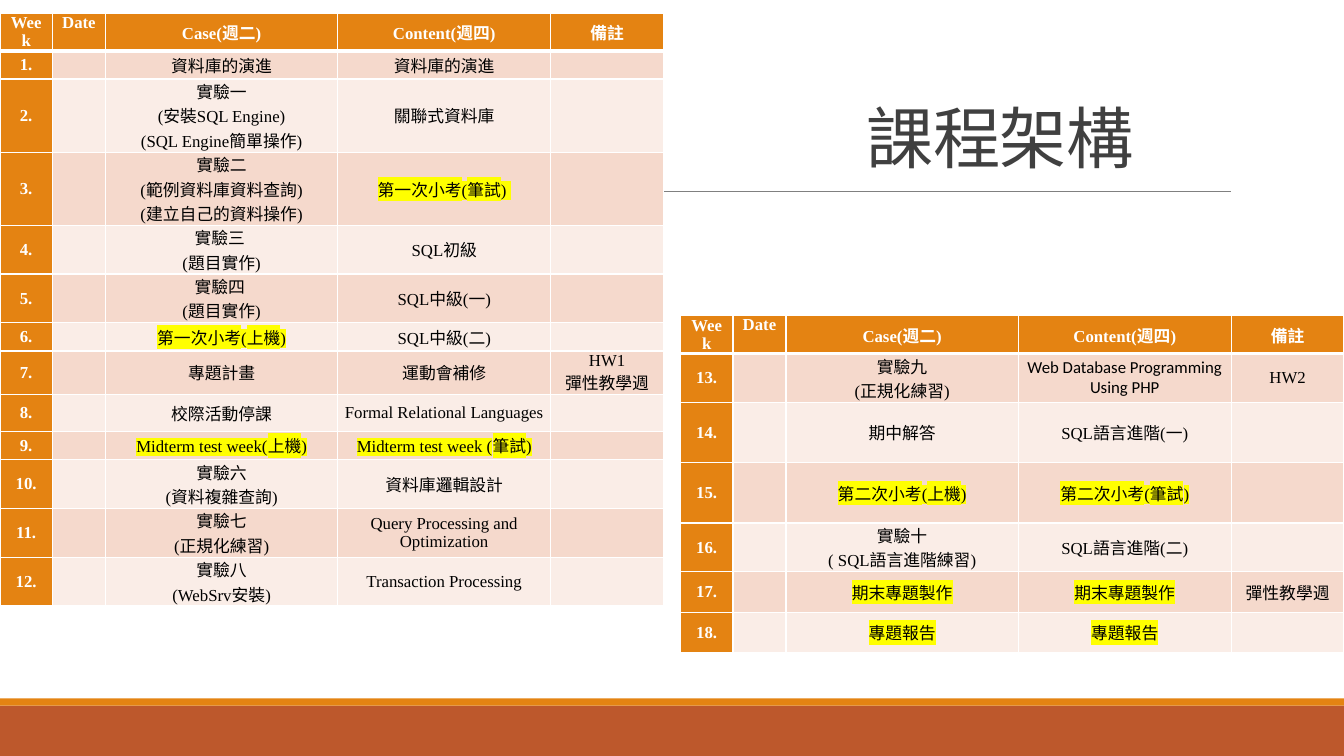
from dataclasses import dataclass

from lxml import etree
from pptx import Presentation
from pptx import util as u
from pptx.dml.color import RGBColor
from pptx.enum import shapes, text
from pptx.oxml.ns import qn

WHITE = RGBColor(0xFF, 0xFF, 0xFF)
BLACK = RGBColor(0, 0, 0)
ORANGE = RGBColor(0xE4, 0x83, 0x12)
RUST = RGBColor(0xBD, 0x58, 0x2C)
GRAY = RGBColor(0x80, 0x80, 0x80)
CHARCOAL = RGBColor(0x40, 0x40, 0x40)
YELLOW = RGBColor(0xFF, 0xFF, 0x00)
BANDS = RGBColor(0xF5, 0xD9, 0xCC), RGBColor(0xFA, 0xED, 0xE7)

SERIF, SANS, CJK = "Times New Roman", "Calibri", "Noto Sans CJK SC"


@dataclass
class Entry:
    """Cell wording: \\n starts a paragraph, \\v breaks a line."""
    wording: str
    latin: str = SERIF
    marked: bool = False


def exam(wording):
    return Entry(wording, marked=True)


HEADINGS = ("Week", "Date", "Case(週二)", "Content(週四)", "備註")
COLUMNS = (1.32, 1.34, 5.85, 5.37, 2.84)
HEADER_HEIGHT = 0.95

# Each week: row height, case, content, remark
FIRST_WEEKS = [
    (0.71, "資料庫的演進", "資料庫的演進", ""),
    (1.84, "實驗一\n(安裝SQL Engine)\v(SQL Engine簡單操作)", "關聯式資料庫", ""),
    (1.84, "實驗二\n(範例資料庫資料查詢)\v(建立自己的資料操作)", exam("第一次小考(筆試) "), ""),
    (1.23, "實驗三 \v(題目實作)", "SQL初級", ""),
    (1.23, "實驗四 \v(題目實作)", "SQL中級(一)", ""),
    (0.71, exam("第一次小考(上機)"), "SQL中級(二)", ""),
    (1.08, "專題計畫", "運動會補修", "HW1\n彈性教學週"),
    (0.94, "校際活動停課", "Formal Relational Languages", ""),
    (0.71, exam("Midterm test week(上機)"), exam("Midterm test week (筆試)"), ""),
    (1.23, "實驗六\v(資料複雜查詢)", "資料庫邏輯設計", ""),
    (1.23, "實驗七\v(正規化練習)", "Query Processing and Optimization", ""),
    (1.23, "實驗八\v(WebSrv安裝)", "Transaction Processing", ""),
]
LAST_WEEKS = [
    (1.23, "實驗九\v(正規化練習)", Entry("Web Database Programming Using PHP", SANS), "HW2"),
    (1.52, "期中解答", "SQL語言進階(一)", ""),
    (1.52, exam("第二次小考(上機)"), exam("第二次小考(筆試)"), ""),
    (1.23, "實驗十\v( SQL語言進階練習)", "SQL語言進階(二)", ""),
    (1.02, exam("期末專題製作"), exam("期末專題製作"), "彈性教學週"),
    (1.02, exam("專題報告"), exam("專題報告"), ""),
]


def apply(target, values):
    for name, value in values.items():
        setattr(target, name, value)


class ScheduleSlide:
    def __init__(self, deck):
        self.slide = deck.slides.add_slide(deck.slide_layouts[5])
        self.size = u.Pt(12)

    def style_run(self, run, latin, size, color, bold=False):
        apply(run.font, {"name": latin, "size": size, "bold": bold})
        run.font.color.rgb = color
        east_asian = etree.Element(qn("a:ea"), typeface=CJK)
        run.font._element.find(qn("a:latin")).addnext(east_asian)

    def highlight(self, run):
        mark = etree.Element(qn("a:highlight"))
        etree.SubElement(mark, qn("a:srgbClr"), val=str(YELLOW))
        run.font._element.find(qn("a:latin")).addprevious(mark)

    def title(self, wording, left, top, width, height):
        heading = self.slide.shapes.title
        apply(heading, {"left": u.Cm(left), "top": u.Cm(top),
                        "width": u.Cm(width), "height": u.Cm(height)})
        frame = heading.text_frame
        frame.text = wording
        apply(frame, {"vertical_anchor": text.MSO_ANCHOR.BOTTOM, "word_wrap": True,
                      "auto_size": text.MSO_AUTO_SIZE.NONE})
        paragraph = frame.paragraphs[0]
        apply(paragraph, {"alignment": text.PP_ALIGN.LEFT, "line_spacing": 0.85})
        run = paragraph.runs[0]
        self.style_run(run, CJK, u.Pt(48), CHARCOAL)
        run.font._element.set("spc", "-50")

    def bar(self, top, height, color):
        band = self.slide.shapes.add_shape(
            shapes.MSO_SHAPE.RECTANGLE, 0, u.Cm(top), u.Cm(33.87), u.Cm(height))
        band.shadow.inherit = False
        band.fill.solid()
        band.fill.fore_color.rgb = color
        band.line.fill.background()

    def rule(self, start, end, y):
        line = self.slide.shapes.add_connector(
            shapes.MSO_CONNECTOR.STRAIGHT, u.Cm(start), u.Cm(y), u.Cm(end), u.Cm(y))
        line.line.color.rgb = GRAY
        line.line.width = u.Pt(0.5)
        etree.SubElement(line._element.spPr, qn("a:effectLst"))

    def borders(self, cell, top, bottom):
        """Draw white cell edges; top and bottom are widths in points."""
        properties = cell._tc.get_or_add_tcPr()
        edges = {"a:lnL": 1, "a:lnR": 1, "a:lnT": top, "a:lnB": bottom}
        for position, (edge, width) in enumerate(edges.items()):
            line = etree.Element(qn(edge), w=str(u.Pt(width)))
            fill = etree.SubElement(line, qn("a:solidFill"))
            etree.SubElement(fill, qn("a:srgbClr"), val=str(WHITE))
            properties.insert(position, line)

    def fill_cell(self, cell, entry, background, color, bold):
        if isinstance(entry, str):
            entry = Entry(entry)
        apply(cell, {"margin_left": u.Cm(0.18), "margin_right": u.Cm(0.18),
                     "margin_top": 0, "margin_bottom": 0,
                     "vertical_anchor": text.MSO_ANCHOR.MIDDLE})
        cell.fill.solid()
        cell.fill.fore_color.rgb = background
        cell.text_frame.text = entry.wording
        points = str(self.size.centipoints)
        for paragraph in cell.text_frame.paragraphs:
            paragraph.alignment = text.PP_ALIGN.CENTER
            for run in paragraph.runs:
                self.style_run(run, entry.latin, self.size, color, bold)
                if entry.marked:
                    self.highlight(run)
            for line_break in paragraph._p.findall(qn("a:br")):
                etree.SubElement(line_break, qn("a:rPr"), sz=points)
            paragraph._p.get_or_add_endParaRPr().set("sz", points)

    def schedule(self, left, top, weeks, first_week):
        heights = [HEADER_HEIGHT] + [week[0] for week in weeks]
        rows = [HEADINGS] + [(f"{number}.", "", *week[1:])
                             for number, week in enumerate(weeks, first_week)]
        table = self.slide.shapes.add_table(
            len(rows), len(COLUMNS), u.Cm(left), u.Cm(top),
            u.Cm(sum(COLUMNS)), u.Cm(sum(heights))).table
        for column, width in zip(table.columns, COLUMNS):
            column.width = u.Cm(width)
        for r, (height, entries) in enumerate(zip(heights, rows)):
            table.rows[r].height = u.Cm(height)
            for c, entry in enumerate(entries):
                cell = table.cell(r, c)
                accent = r == 0 or c == 0
                self.fill_cell(cell, entry, ORANGE if accent else BANDS[(r - 1) % 2],
                               WHITE if accent else BLACK, accent)
                self.borders(cell, 3 if r == 1 else 1, 3 if r == 0 else 1)
        table.cell(0, HEADINGS.index("Date")).vertical_anchor = text.MSO_ANCHOR.TOP


def main():
    deck = Presentation()
    apply(deck, {"slide_width": u.Cm(33.87), "slide_height": u.Cm(19.05)})
    page = ScheduleSlide(deck)
    page.bar(17.78, 1.27, RUST)
    page.bar(17.6, 0.18, ORANGE)
    page.rule(3.33, 31.01, 4.83)
    page.title("課程架構", 21.59, 0.56, 11.35, 4.04)
    page.schedule(0, 0.33, FIRST_WEEKS, 1)
    page.schedule(17.15, 7.96, LAST_WEEKS, len(FIRST_WEEKS) + 1)
    deck.save("out.pptx")


if __name__ == "__main__":
    main()
